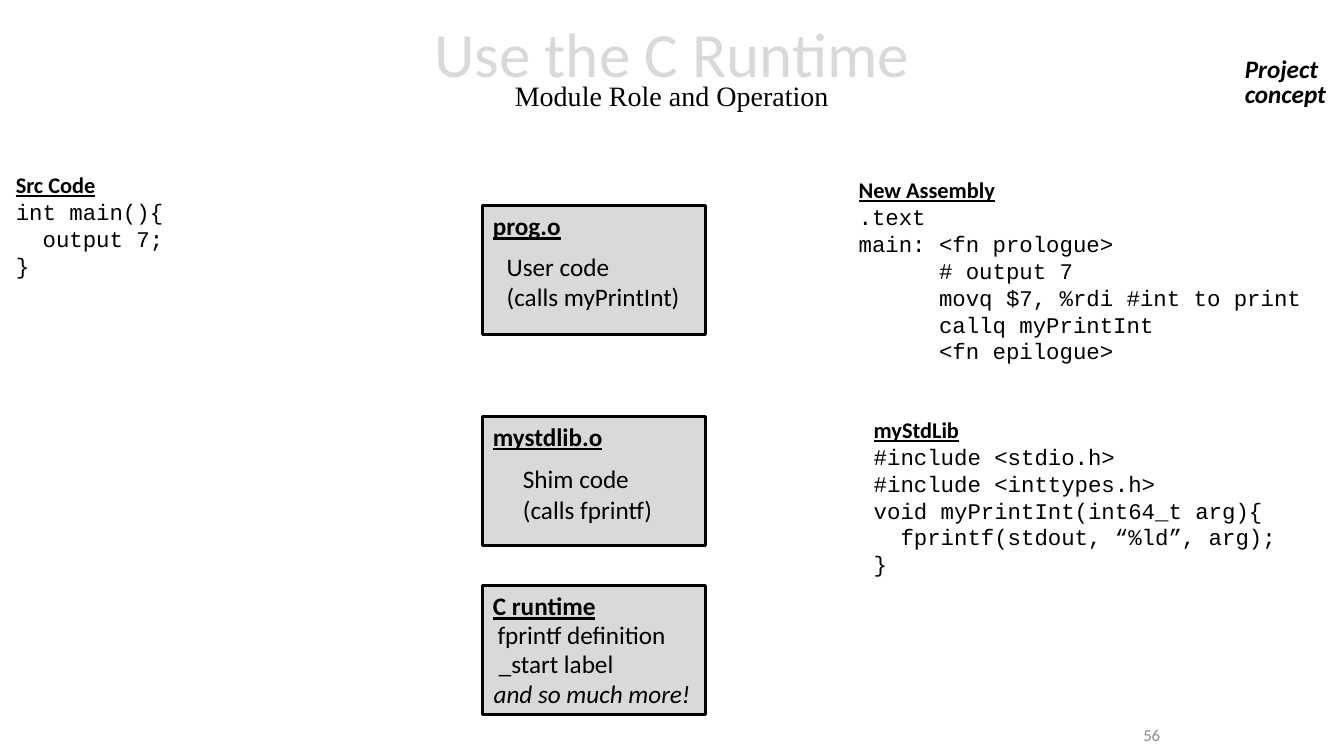
from pptx import Presentation
from pptx import util as u
from pptx.dml.color import RGBColor
from pptx.enum import shapes, text

# Content: places are left, top, width, height in cm
HEADING = [("Use the C Runtime", "title"), ("Module Role and Operation", "subtitle")]
PAGE_NUMBER = [("56", "number")]
TAG = [("Project", "tag"), ("concept", "tag")]

LISTINGS = [
    ((0.15, 4.19, 4.29, 3.0), "Src Code", [
        "int main(){",
        "  output 7;",
        "}",
    ]),
    ((21.39, 4.32, 11.84, 5.05), "New Assembly", [
        ".text",
        "main: <fn prologue>",
        "      # output 7",
        "      movq $7, %rdi #int to print",
        "      callq myPrintInt",
        "      <fn epilogue>",
    ]),
    ((21.77, 10.36, 10.8, 4.37), "myStdLib", [
        "#include <stdio.h>",
        "#include <inttypes.h>",
        "void myPrintInt(int64_t arg){",
        "  fprintf(stdout, “%ld”, arg);",
        "}",
    ]),
]

MODULES = [(5.18, "prog.o"), (10.49, "mystdlib.o"), (14.76, "C runtime")]
MODULE_LEFT, MODULE_WIDTH, MODULE_HEIGHT = 12.17, 5.61, 3.25

ROLES = [
    ((12.29, 15.47, 4.83, 1.02), [("fprintf definition", "role")]),
    ((12.32, 16.21, 3.43, 1.02), [("_start label", "role")]),
    ((12.19, 16.97, 5.54, 1.02), [("and so much more!", "aside")]),
    ((12.52, 6.2, 4.9, 1.8), [("User code", "role"), ("(calls myPrintInt)", "role")]),
    ((12.93, 11.56, 3.84, 1.8), [("Shim code", "role"), ("(calls fprintf)", "role")]),
]

# Theme: font, size, colour, then further font settings
THEME = {
    "ink": "000000",
    "panel": "D9D9D9",
    "border": u.Pt(2),
    "styles": {
        "title": ("Calibri", 45, "D9D9D9", {}),
        "subtitle": ("Times New Roman", 20, "000000", {}),
        "number": ("Calibri", 12, "8C8C8C", {}),
        "caption": ("Calibri", 16, "000000", {"bold": True, "underline": True}),
        "code": ("Courier New", 16, "000000", {}),
        "module": ("Calibri", 18, "000000", {"bold": True, "underline": True}),
        "role": ("Calibri", 18, "000000", {}),
        "aside": ("Calibri", 18, "000000", {"italic": True}),
        "tag": ("Calibri", 18, "000000", {"bold": True, "italic": True}),
    },
}


def colour(code):
    return RGBColor.from_string(code)


def write(frame, lines, align=text.PP_ALIGN.LEFT, spacing=None):
    for index, (words, style) in enumerate(lines):
        paragraph = frame.add_paragraph() if index else frame.paragraphs[0]
        paragraph.alignment = align
        if spacing:
            paragraph.line_spacing = spacing
        run = paragraph.add_run()
        run.text = words
        name, size, ink, extras = THEME["styles"][style]
        for key, value in {"name": name, "size": u.Pt(size), **extras}.items():
            setattr(run.font, key, value)
        run.font.color.rgb = colour(ink)


def add_text(slide, place, lines, fixed=False, **layout):
    frame = slide.shapes.add_textbox(*map(u.Cm, place)).text_frame
    frame.word_wrap = fixed
    if fixed:
        frame.vertical_anchor = text.MSO_ANCHOR.MIDDLE
    else:
        frame.auto_size = text.MSO_AUTO_SIZE.SHAPE_TO_FIT_TEXT
    write(frame, lines, **layout)


def add_module(slide, top, name):
    place = (MODULE_LEFT, top, MODULE_WIDTH, MODULE_HEIGHT)
    module = slide.shapes.add_shape(shapes.MSO_SHAPE.RECTANGLE, *map(u.Cm, place))
    module.shadow.inherit = False
    module.fill.solid()
    module.fill.fore_color.rgb = colour(THEME["panel"])
    module.line.color.rgb = colour(THEME["ink"])
    module.line.width = THEME["border"]
    module.text_frame.vertical_anchor = text.MSO_ANCHOR.TOP
    write(module.text_frame, [(name, "module")])


def main():
    deck = Presentation()
    deck.slide_width, deck.slide_height = u.Cm(33.87), u.Cm(19.05)
    slide = deck.slides.add_slide(deck.slide_layouts[6])

    # Heading and page number
    add_text(slide, (4.23, 0, 25.4, 3.68), HEADING, fixed=True,
             align=text.PP_ALIGN.CENTER, spacing=0.7)
    add_text(slide, (23.57, 18.01, 5.92, 1.02), PAGE_NUMBER, fixed=True,
             align=text.PP_ALIGN.RIGHT)

    # Code listings
    for place, caption, code in LISTINGS:
        add_text(slide, place, [(caption, "caption")] + [(line, "code") for line in code])

    # Modules and their roles
    for top, name in MODULES:
        add_module(slide, top, name)
    for place, lines in ROLES:
        add_text(slide, place, lines)

    # Corner tag
    add_text(slide, (31.12, 1.35, 2.59, 1.55), TAG, spacing=u.Pt(18))

    deck.save("out.pptx")


if __name__ == "__main__":
    main()
